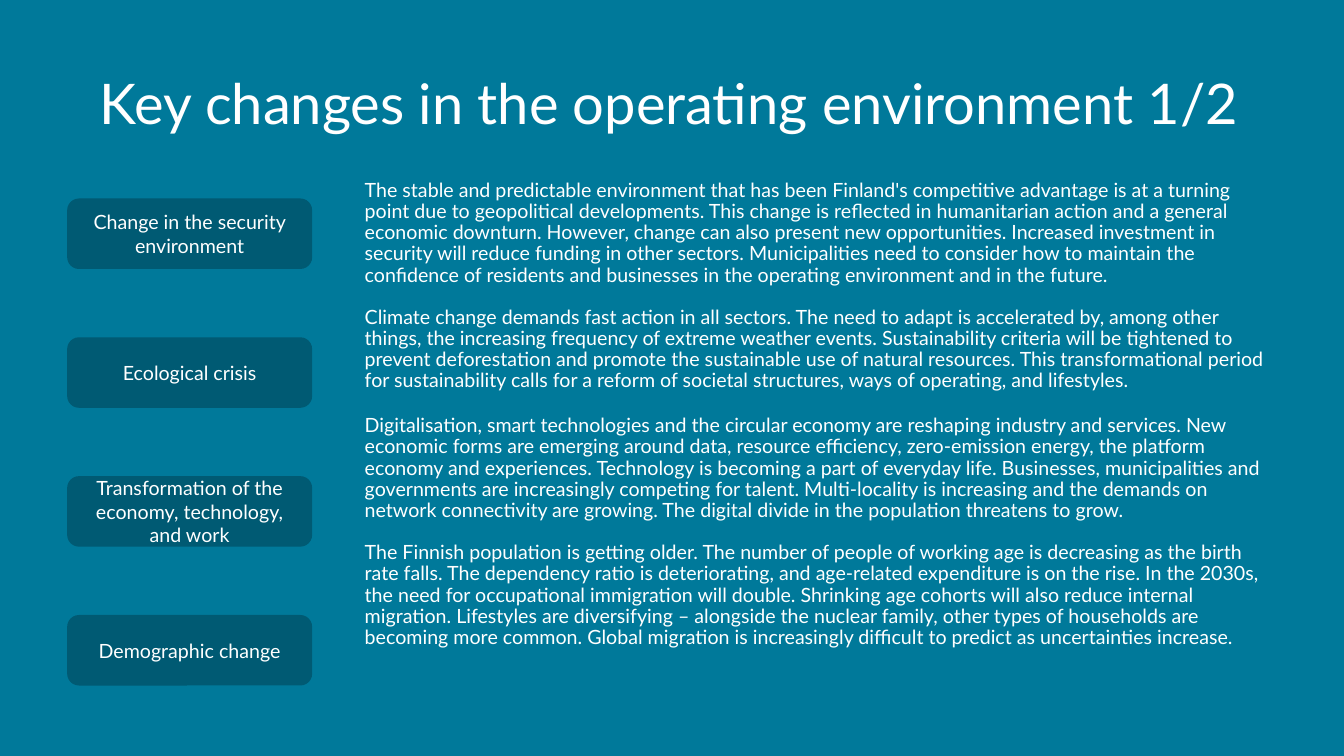
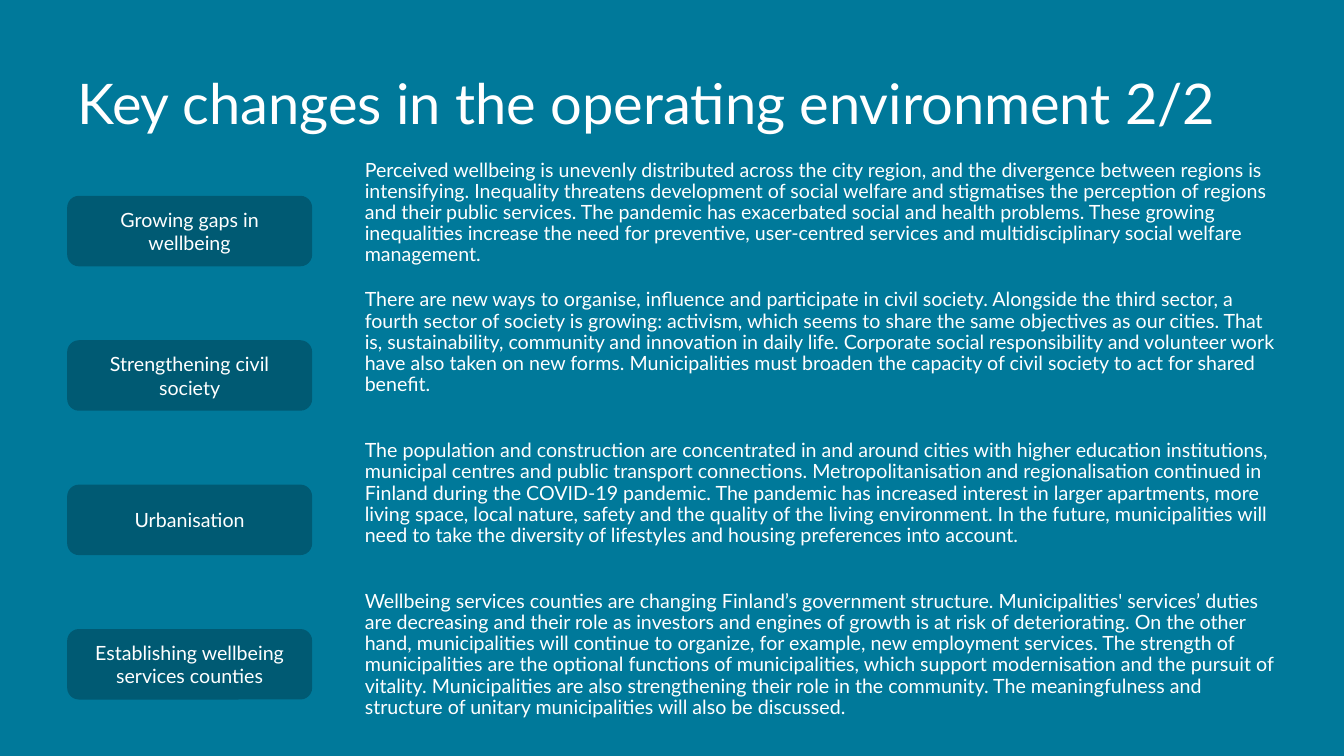
"""Build two slides on key changes in the operating environment."""
from dataclasses import dataclass

import pptx
import pptx.dml.color
import pptx.enum.shapes
import pptx.enum.text
import pptx.slide
import pptx.text.text
import pptx.util

WIDTH = pptx.util.Inches(13.33)
HEIGHT = pptx.util.Inches(7.5)
FONT = "Lato"
TEAL, DARK, WHITE = "00799A", "005A73", "FFFFFF"
ALIGN = pptx.enum.text.PP_ALIGN
ANCHOR = pptx.enum.text.MSO_ANCHOR


@dataclass(frozen=True)
class Box:
    left: float
    top: float
    width: float
    height: float

    def place(self) -> tuple[int, int, int, int]:
        return (
            int(WIDTH * self.left / 100),
            int(HEIGHT * self.top / 100),
            int(WIDTH * self.width / 100),
            int(HEIGHT * self.height / 100),
        )


@dataclass(frozen=True)
class Topic:
    label: str
    text: str
    gap: float = 0


@dataclass(frozen=True)
class Page:
    title: str
    head: Box
    body: Box
    first: float
    last: float
    topics: list[Topic]


PAGES = [
    Page(
        "Key changes in the operating environment 1/2",
        Box(6.67, 7.6, 93.33, 12.93),
        Box(26.4, 23.2, 68.65, 74.93),
        26.25,
        81.35,
        [
            Topic(
                "Change in the security environment",
                "The stable and predictable environment that has been Finland's competitive "
                "advantage is at a turning point due to geopolitical developments. This change "
                "is reflected in humanitarian action and a general economic downturn. However, "
                "change can also present new opportunities. Increased investment in security "
                "will reduce funding in other sectors. Municipalities need to consider how to "
                "maintain the confidence of residents and businesses in the operating "
                "environment and in the future.",
            ),
            Topic(
                "Ecological crisis",
                "Climate change demands fast action in all sectors. The need to adapt is "
                "accelerated by, among other things, the increasing frequency of extreme "
                "weather events. Sustainability criteria will be tightened to prevent "
                "deforestation and promote the sustainable use of natural resources. This "
                "transformational period for sustainability calls for a reform of societal "
                "structures, ways of operating, and lifestyles.",
                15,
            ),
            Topic(
                "Transformation of the economy, technology, and work",
                "Digitalisation, smart technologies and the circular economy are reshaping "
                "industry and services. New economic forms are emerging around data, resource "
                "efficiency, zero-emission energy, the platform economy and experiences. "
                "Technology is becoming a part of everyday life. Businesses, municipalities "
                "and governments are increasingly competing for talent. Multi-locality is "
                "increasing and the demands on network connectivity are growing. The digital "
                "divide in the population threatens to grow.",
                17,
            ),
            Topic(
                "Demographic change",
                "The Finnish population is getting older. The number of people of working age "
                "is decreasing as the birth rate falls. The dependency ratio is deteriorating, "
                "and age-related expenditure is on the rise. In the 2030s, the need for "
                "occupational immigration will double. Shrinking age cohorts will also reduce "
                "internal migration. Lifestyles are diversifying – alongside the nuclear "
                "family, other types of households are becoming more common. Global migration "
                "is increasingly difficult to predict as uncertainties increase.",
                15,
            ),
        ],
    ),
    Page(
        "Key changes in the operating environment 2/2",
        Box(5, 7.6, 93.33, 12.93),
        Box(26.4, 20.53, 69.6, 79.47),
        25.9,
        83.2,
        [
            Topic(
                "Growing gaps in wellbeing",
                "Perceived wellbeing is unevenly distributed across the city region, and the "
                "divergence between regions is intensifying. Inequality threatens development "
                "of social welfare and stigmatises the perception of regions and their public "
                "services. The pandemic has exacerbated social and health problems. These "
                "growing inequalities increase the need for preventive, user-centred services "
                "and multidisciplinary social welfare management.",
            ),
            Topic(
                "Strengthening civil society",
                "There are new ways to organise, influence and participate in civil society. "
                "Alongside the third sector, a fourth sector of society is growing: activism, "
                "which seems to share the same objectives as our cities. That is, "
                "sustainability, community and innovation in daily life. Corporate social "
                "responsibility and volunteer work have also taken on new forms. "
                "Municipalities must broaden the capacity of civil society to act for shared "
                "benefit.",
                17,
            ),
            Topic(
                "Urbanisation",
                "The population and construction are concentrated in and around cities with "
                "higher education institutions, municipal centres and public transport "
                "connections. Metropolitanisation and regionalisation continued in Finland "
                "during the COVID-19 pandemic. The pandemic has increased interest in larger "
                "apartments, more living space, local nature, safety and the quality of the "
                "living environment. In the future, municipalities will need to take the "
                "diversity of lifestyles and housing preferences into account.",
                32,
            ),
            Topic(
                "Establishing wellbeing services counties",
                "Wellbeing services counties are changing Finland’s government structure. "
                "Municipalities' services’ duties are decreasing and their role as investors "
                "and engines of growth is at risk of deteriorating. On the other hand, "
                "municipalities will continue to organize, for example, new employment "
                "services. The strength of municipalities are the optional functions of "
                "municipalities, which support modernisation and the pursuit of vitality. "
                "Municipalities are also strengthening their role in the community. The "
                "meaningfulness and structure of unitary municipalities will also be "
                "discussed.",
                32,
            ),
        ],
    ),
]


def paint(fill: pptx.dml.fill.FillFormat, tint: str) -> None:
    fill.solid()
    fill.fore_color.rgb = pptx.dml.color.RGBColor.from_string(tint)


def style(para: pptx.text.text._Paragraph, size: float) -> None:
    para.font.name = FONT
    para.font.size = pptx.util.Pt(size)
    paint(para.font.fill, WHITE)


def write(slide: pptx.slide.Slide, box: Box, size: float,
          lines: list[tuple[str, float]], anchor: ANCHOR) -> None:
    frame = slide.shapes.add_textbox(*box.place()).text_frame
    frame.word_wrap = True
    frame.vertical_anchor = anchor
    for index, (text, gap) in enumerate(lines):
        para = frame.add_paragraph() if index else frame.paragraphs[0]
        para.text = text
        para.line_spacing = 0.9
        if gap:
            para.space_before = pptx.util.Pt(gap)
        style(para, size)


def tag(slide: pptx.slide.Slide, box: Box, label: str) -> None:
    kind = pptx.enum.shapes.MSO_SHAPE.ROUNDED_RECTANGLE
    shape = slide.shapes.add_shape(kind, *box.place())
    shape.shadow.inherit = False
    paint(shape.fill, DARK)
    shape.line.fill.background()
    frame = shape.text_frame
    frame.word_wrap = True
    frame.vertical_anchor = ANCHOR.MIDDLE
    frame.margin_left = frame.margin_right = pptx.util.Inches(0.12)
    frame.margin_top = frame.margin_bottom = 0
    para = frame.paragraphs[0]
    para.text = label
    para.alignment = ALIGN.CENTER
    style(para, 14)


def draw(deck: pptx.presentation.Presentation, page: Page) -> None:
    slide = deck.slides.add_slide(deck.slide_layouts[6])
    paint(slide.background.fill, TEAL)
    write(slide, page.head, 40, [(page.title, 0)], ANCHOR.MIDDLE)
    lines = [(topic.text, topic.gap) for topic in page.topics]
    write(slide, page.body, 14, lines, ANCHOR.TOP)
    step = (page.last - page.first) / (len(page.topics) - 1)
    for row, topic in enumerate(page.topics):
        tag(slide, Box(5, page.first + row * step, 18.23, 9.33), topic.label)


def main() -> None:
    deck = pptx.Presentation()
    deck.slide_width, deck.slide_height = WIDTH, HEIGHT
    for page in PAGES:
        draw(deck, page)
    deck.save("out.pptx")


if __name__ == "__main__":
    main()
